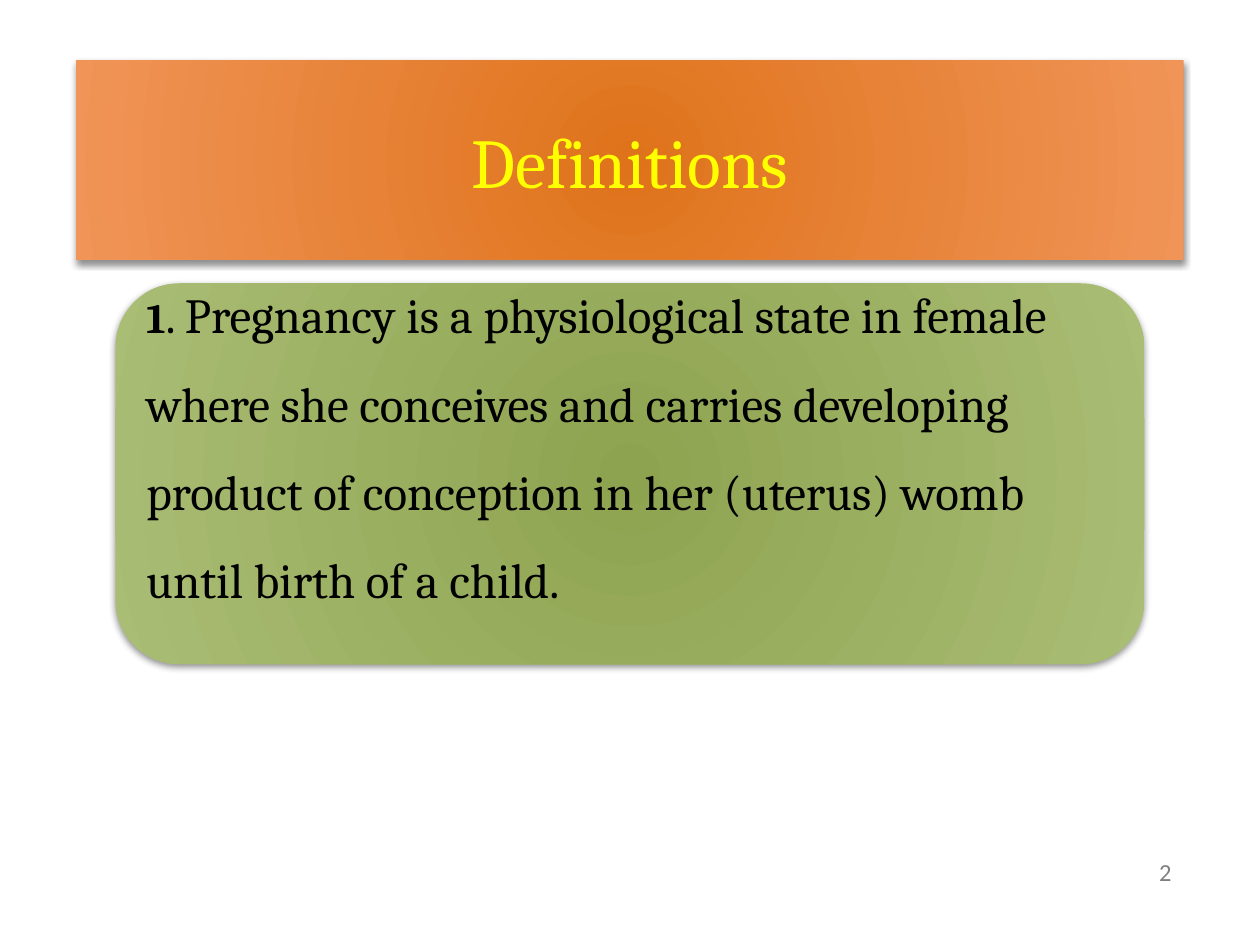
from lxml.etree import SubElement
from pptx import Presentation
from pptx.dml.color import RGBColor
from pptx.enum.shapes import MSO_SHAPE as Preset
from pptx.enum.text import MSO_ANCHOR as Anchor, PP_ALIGN as Align
from pptx.oxml.ns import qn
from pptx.util import Pt

THEME = {
    "orange": ("DF731B", "F09457"),
    "green": ("8EA350", "AABD75"),
    "yellow": "FFFF00",
    "black": "000000",
    "gray": "808080",
    "serif": "Cambria",
    "sans": "Calibri",
    "title_size": 40,
    "body_size": 28,
    "marker_size": 24,
    "number_size": 14,
}

TITLE = "Definitions"
MARKER = "1"
DEFINITION = (
    ". Pregnancy is a physiological state in female where she conceives and "
    "carries developing product of conception in her (uterus) womb until "
    "birth of a child."
)
PAGE_NUMBER = "2"

TITLE_BOX = (43.4, 34.5, 633, 114)
PANEL_BOX = (66, 162, 588, 217.5)
DEFINITION_BOX = (76.5, 172.5, 567, 196.5)
NUMBER_BOX = (508.5, 484, 168, 28.75)


def points(box):
    return [Pt(value) for value in box]


def add_run(paragraph, text, size, color, font="serif", bold=False):
    run = paragraph.add_run()
    run.text = text
    run.font.name = THEME[font]
    run.font.size = Pt(THEME[size])
    run.font.bold = bold
    run.font.color.rgb = RGBColor.from_string(THEME[color])


def style_panel(shape, colors):
    shape.fill.gradient()
    for stop, color in zip(shape.fill.gradient_stops, THEME[colors]):
        stop.color.rgb = RGBColor.from_string(color)
    properties = shape.element.spPr
    gradient = properties.find(qn("a:gradFill"))
    gradient.remove(gradient.find(qn("a:lin")))
    circle = SubElement(gradient, qn("a:path"), path="circle")
    SubElement(circle, qn("a:fillToRect"), l="40000", t="100000", r="40000", b="100000")

    shape.line.fill.background()
    shape.shadow.inherit = False
    shadow = SubElement(
        properties.find(qn("a:effectLst")), qn("a:outerShdw"),
        blurRad=str(Pt(4)), dist=str(Pt(2)), dir=str(84 * 60000), rotWithShape="0",
    )
    color = SubElement(shadow, qn("a:srgbClr"), val=THEME["black"])
    SubElement(color, qn("a:alpha"), val="44000")


def add_text(shapes, box):
    frame = shapes.add_textbox(*points(box)).text_frame
    frame.word_wrap = True
    frame.vertical_anchor = Anchor.MIDDLE
    return frame


presentation = Presentation()
presentation.slide_width, presentation.slide_height = Pt(720), Pt(540)
slide = presentation.slides.add_slide(presentation.slide_layouts[5])

title = slide.shapes.title
title.left, title.top, title.width, title.height = points(TITLE_BOX)
style_panel(title, "orange")
title.text_frame.vertical_anchor = Anchor.MIDDLE
heading = title.text_frame.paragraphs[0]
heading.alignment = Align.CENTER
add_run(heading, TITLE, "title_size", "yellow")

group = slide.shapes.add_group_shape()
panel = group.shapes.add_shape(Preset.ROUNDED_RECTANGLE, *points(PANEL_BOX))
style_panel(panel, "green")

frame = add_text(group.shapes, DEFINITION_BOX)
frame.margin_top = Pt(7.2)
frame.margin_bottom = Pt(55)
definition = frame.paragraphs[0]
definition.line_spacing = 1.5
add_run(definition, MARKER, "marker_size", "black", bold=True)
add_run(definition, DEFINITION, "body_size", "black")

number = add_text(slide.shapes, NUMBER_BOX).paragraphs[0]
number.alignment = Align.RIGHT
add_run(number, PAGE_NUMBER, "number_size", "gray", font="sans")

presentation.save("out.pptx")
